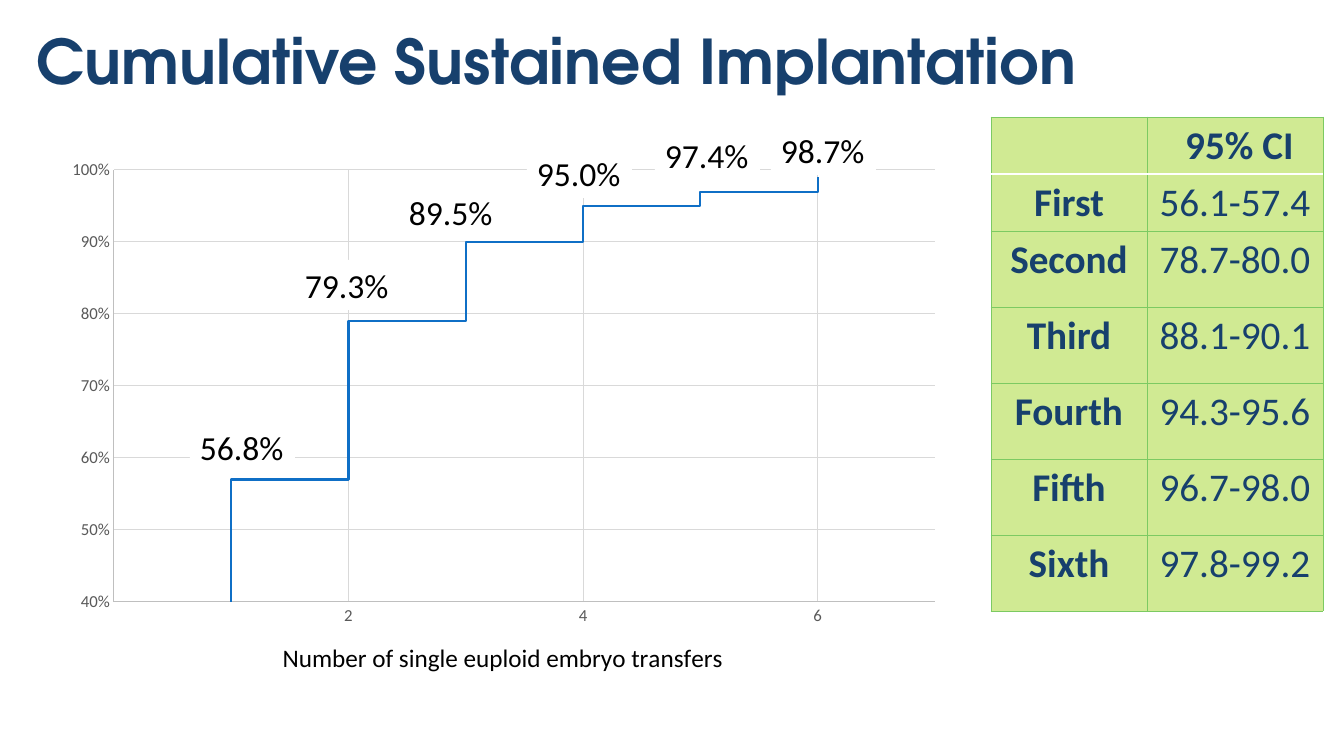
from lxml import etree
from pptx import Presentation
from pptx import util as u
from pptx.chart.data import XyChartData
from pptx.dml.color import RGBColor
from pptx.enum import chart as ch, text
from pptx.oxml import ns

NAVY = RGBColor(0x17, 0x40, 0x6D)
BLUE = RGBColor(0x0F, 0x6F, 0xC6)
LIME = RGBColor(0xD0, 0xEA, 0x93)
GREEN = RGBColor(0x7C, 0xCA, 0x62)
WHITE = RGBColor(0xFF, 0xFF, 0xFF)
BLACK = RGBColor(0, 0, 0)
GRAY = RGBColor(0x59, 0x59, 0x59)
AXIS_GRAY = RGBColor(0xBF, 0xBF, 0xBF)
GRID_GRAY = RGBColor(0xD9, 0xD9, 0xD9)

HEADING_FONT = "TeX Gyre Adventor"
BODY_FONT = "Calibri"
EMU_PER_PX = 914400 / 100.8
CHART_WIDTH, CHART_HEIGHT = 922, 547

# Cumulative rate after each transfer, its label, and the label's left and top
TRANSFERS = [
    (0.57, "56.8%", 190, 422),
    (0.79, "79.3%", 295, 260),
    (0.90, "89.5%", 399, 187),
    (0.95, "95.0%", 527, 148),
    (0.97, "97.4%", 655, 130),
    (0.99, "98.7%", 771, 125),
]
INTERVALS = [
    ("", " 95% CI"),
    ("First", "56.1-57.4"),
    ("Second", "78.7-80.0"),
    ("Third", "88.1-90.1"),
    ("Fourth", "94.3-95.6"),
    ("Fifth", "96.7-98.0"),
    ("Sixth", "97.8-99.2"),
]


def px(length):
    return u.Emu(round(length * EMU_PER_PX))


def box(*lengths):
    return [px(length) for length in lengths]


def set_font(font, size, color, name=BODY_FONT, bold=False):
    font.size, font.name, font.bold = u.Pt(size), name, bold
    font.color.rgb = color


def add_title(slide, words):
    frame = slide.shapes.add_textbox(*box(27, 4, 1210, 121)).text_frame
    frame.word_wrap = True
    frame.vertical_anchor = text.MSO_ANCHOR.MIDDLE
    heading = frame.paragraphs[0]
    heading.text = words
    heading.line_spacing = 0.9
    set_font(heading.font, 44, NAVY, HEADING_FONT, True)


def add_rate_label(slide, words, left, top):
    label = slide.shapes.add_textbox(*box(left, top, 105, 50))
    label.fill.solid()
    label.fill.fore_color.rgb = WHITE
    frame = label.text_frame
    frame.word_wrap = False
    frame.auto_size = text.MSO_AUTO_SIZE.SHAPE_TO_FIT_TEXT
    frame.paragraphs[0].text = words
    set_font(frame.paragraphs[0].font, 24, BLACK)


def set_layout(parent, index, modes, **lengths):
    """Give a chart part a manual place, in px from the chart's corner."""
    for old in parent.findall(ns.qn("c:layout")):
        parent.remove(old)
    layout = etree.Element(ns.qn("c:layout"))
    manual = etree.SubElement(layout, ns.qn("c:manualLayout"))
    for tag, mode in modes.items():
        etree.SubElement(manual, ns.qn(f"c:{tag}")).set("val", mode)
    for tag, length in lengths.items():
        whole = CHART_WIDTH if tag in "xw" else CHART_HEIGHT
        etree.SubElement(manual, ns.qn(f"c:{tag}")).set(
            "val", str(length / whole))
    parent.insert(index, layout)


def style_axis(axis, low, high, step, number_format):
    axis.minimum_scale, axis.maximum_scale, axis.major_unit = low, high, step
    axis.major_tick_mark = axis.minor_tick_mark = ch.XL_TICK_MARK.NONE
    axis.has_major_gridlines = True
    for line, color in ((axis.format.line, AXIS_GRAY),
                        (axis.major_gridlines.format.line, GRID_GRAY)):
        line.color.rgb = color
        line.width = u.Pt(0.75)
    axis.tick_labels.number_format = number_format
    axis.tick_labels.number_format_is_linked = False
    set_font(axis.tick_labels.font, 12, GRAY)


def add_step_chart(slide, rates):
    data = XyChartData()
    steps = data.add_series("Series 1")
    steps.add_data_point(0, 0)
    previous = 0
    for transfer, rate in enumerate(rates, 1):
        steps.add_data_point(transfer, previous)
        steps.add_data_point(transfer, rate)
        previous = rate
    chart = slide.shapes.add_chart(
        ch.XL_CHART_TYPE.XY_SCATTER_LINES_NO_MARKERS,
        *box(26, 149, CHART_WIDTH, CHART_HEIGHT), data).chart
    chart.has_title = chart.has_legend = False
    set_font(chart.font, 10, BLACK)

    curve = chart.plots[0].series[0]
    curve.smooth = False
    curve.format.line.color.rgb = BLUE
    curve.format.line.width = u.Pt(1.5)
    chart.plots[0].vary_by_categories = False

    style_axis(chart.category_axis, 0, 7, 2, '[=0]"";[=7]"";0')
    style_axis(chart.value_axis, 0.4, 1, 0.1, "0%")
    caption = chart.category_axis.axis_title
    caption_line = caption.text_frame.paragraphs[0]
    caption_line.text = "Number of single euploid embryo transfers"
    set_font(caption_line.font, 18, BLACK)

    edges = {"xMode": "edge", "yMode": "edge"}
    set_layout(caption.element, 1, edges, x=252, y=487)
    set_layout(chart.element.find(".//" + ns.qn("c:plotArea")), 0,
               {"layoutTarget": "inner", **edges}, x=88, y=21, w=821, h=432)


def set_borders(cell, white_sides):
    properties = cell._tc.get_or_add_tcPr()
    for index, side in enumerate("LRTB"):
        white = side in white_sides
        line = etree.Element(ns.qn(f"a:ln{side}"),
                             w=str(u.Pt(1 if white else 0.5)))
        fill = etree.SubElement(line, ns.qn("a:solidFill"))
        etree.SubElement(fill, ns.qn("a:srgbClr"),
                         val=str(WHITE if white else GREEN))
        properties.insert(index, line)


def add_interval_table(slide, rows):
    table = slide.shapes.add_table(
        len(rows), 2, *box(991, 117, 332, 494)).table
    table.first_row = table.horz_banding = False
    for column, width in zip(table.columns, (156, 176)):
        column.width = px(width)
    for row, words in enumerate(rows):
        table.rows[row].height = px(57 if row < 2 else 76)
        for column, word in enumerate(words):
            cell = table.cell(row, column)
            cell.margin_top, cell.margin_bottom = box(5, 4)
            cell.fill.solid()
            cell.fill.fore_color.rgb = LIME
            # A white rule parts the header from the first row
            set_borders(cell, {0: "B", 1: "T"}.get(row, ""))
            entry = cell.text_frame.paragraphs[0]
            entry.text = word
            entry.alignment = text.PP_ALIGN.CENTER
            set_font(entry.font, 28, NAVY, bold=row == 0 or column == 0)


def main():
    deck = Presentation()
    deck.slide_width, deck.slide_height = box(1344, 756)
    slide = deck.slides.add_slide(deck.slide_layouts[6])

    add_title(slide, "Cumulative Sustained Implantation")

    # Step curve and its labels
    add_step_chart(slide, [transfer[0] for transfer in TRANSFERS])
    for _, words, left, top in TRANSFERS:
        add_rate_label(slide, words, left, top)

    # Confidence intervals
    add_interval_table(slide, INTERVALS)
    deck.save("out.pptx")


if __name__ == "__main__":
    main()
